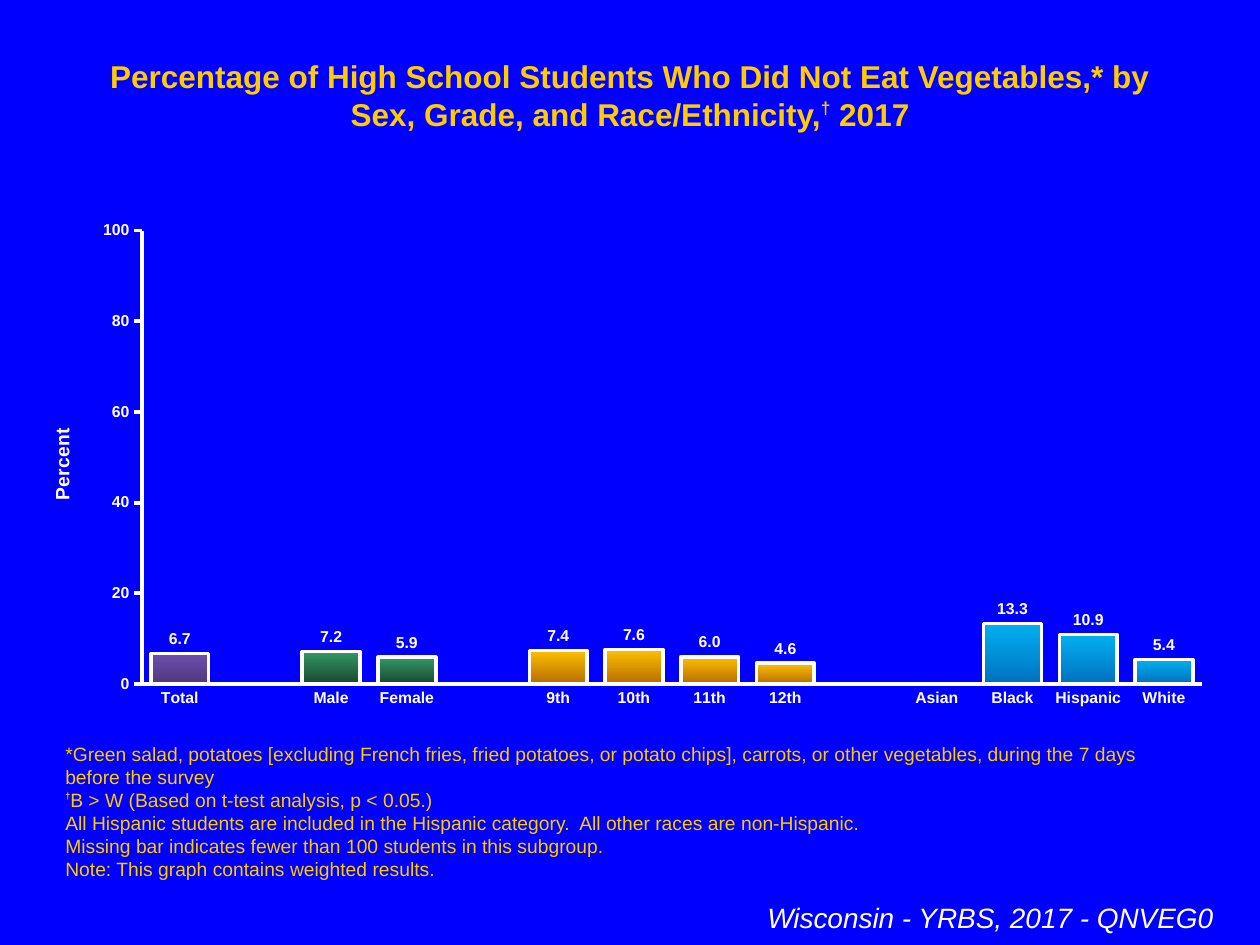
from lxml.etree import SubElement
from pptx import Presentation
from pptx.chart.data import CategoryChartData
from pptx.dml.color import RGBColor
from pptx.enum.chart import XL_CHART_TYPE, XL_LABEL_POSITION, XL_TICK_MARK
from pptx.enum.text import MSO_ANCHOR, MSO_AUTO_SIZE, PP_ALIGN
from pptx.oxml.ns import qn
from pptx.util import Inches, Pt


def style(font, size, color, bold=False, italic=False):
    font.name = "Arial"
    font.size = Pt(size)
    font.bold = bold
    font.italic = italic
    font.color.rgb = RGBColor.from_string(color)


def write(paragraph, pieces, size, color, align, bold=False, italic=False):
    paragraph.alignment = align
    style(paragraph.font, size, color, bold, italic)
    for text, raised_size, baseline in pieces:
        run = paragraph.add_run()
        run.text = text
        if baseline:
            style(run.font, raised_size, color, True)
            run._r.get_or_add_rPr().set("baseline", str(baseline * 1000))


GOLD, WHITE = "FFCC00", "FFFFFF"

prs = Presentation()
prs.slide_width, prs.slide_height = Inches(10), Inches(7.5)
slide = prs.slides.add_slide(prs.slide_layouts[5])
slide.background.fill.solid()
slide.background.fill.fore_color.rgb = RGBColor.from_string("0000FF")

heading = slide.shapes.title
heading.left, heading.top = Inches(0.5), Inches(0.4)
heading.width, heading.height = Inches(9), Inches(0.7)
heading.text_frame.word_wrap = True
heading.text_frame.auto_size = MSO_AUTO_SIZE.NONE
heading.text_frame.vertical_anchor = MSO_ANCHOR.TOP
write(heading.text_frame.paragraphs[0], [
    ("Percentage of High School Students Who Did Not Eat Vegetables,* by "
     "Sex, Grade, and Race/Ethnicity,", 18, 0),
    ("†", 17, 40),
    (" 2017", 18, 0),
], 18, GOLD, PP_ALIGN.CENTER, bold=True)

footnotes = [
    [("*Green salad, potatoes [excluding French fries, fried potatoes, or potato chips], "
      "carrots, or other vegetables, during the 7 days before the survey", 11, 0)],
    [("†", 9, 50), ("B > W (Based on t-test analysis, p < 0.05.)", 11, 0)],
    [("All Hispanic students are included in the Hispanic category.  "
      "All other races are non-Hispanic.", 11, 0)],
    [("Missing bar indicates fewer than 100 students in this subgroup.", 11, 0)],
    [("Note: This graph contains weighted results.", 11, 0)],
]
notes_frame = slide.shapes.add_textbox(
    Inches(0.42), Inches(5.84), Inches(9.17), Inches(1.2)).text_frame
notes_frame.word_wrap = True
notes_frame.vertical_anchor = MSO_ANCHOR.BOTTOM
for index, pieces in enumerate(footnotes):
    paragraph = notes_frame.add_paragraph() if index else notes_frame.paragraphs[0]
    write(paragraph, pieces, 11, GOLD, PP_ALIGN.LEFT)

survey_frame = slide.shapes.add_textbox(
    Inches(0.33), Inches(7.1), Inches(9.4), Inches(0.37)).text_frame
survey_frame.word_wrap = True
write(survey_frame.paragraphs[0], [("Wisconsin - YRBS, 2017 - QNVEG0", 16, 0)],
      16, WHITE, PP_ALIGN.RIGHT, italic=True)

groups = [
    ("6E4EAE", "4F387C", [("Total", 6.7)]),
    ("339966", "18472F", [("Male", 7.2), ("Female", 5.9)]),
    ("FFC000", "B66D00", [("9th", 7.4), ("10th", 7.6), ("11th", 6.0), ("12th", 4.6)]),
    ("00B0F0", "0070C0", [("Asian", None), ("Black", 13.3), ("Hispanic", 10.9), ("White", 5.4)]),
]
bars = []
for top_color, bottom_color, members in groups:
    if bars:
        bars.append(("", None, None))
    bars += [(name, value, (top_color, bottom_color)) for name, value in members]

data = CategoryChartData(number_format="0.0")
data.categories = [name for name, _, _ in bars]
data.add_series("Series 1", [value for _, value, _ in bars])
chart = slide.shapes.add_chart(
    XL_CHART_TYPE.COLUMN_CLUSTERED,
    Inches(0.17), Inches(1.67), Inches(9.56), Inches(4), data).chart
chart.has_legend = False
chart.has_title = False
style(chart.font, 18, WHITE)

plot = chart.plots[0]
plot.gap_width, plot.overlap = 31, 100
plot.vary_by_categories = False
plot.has_data_labels = True
labels = plot.data_labels
labels.show_value = True
labels.number_format, labels.number_format_is_linked = "#,##0.0", False
labels.position = XL_LABEL_POSITION.OUTSIDE_END
style(labels.font, 9, WHITE, bold=True)

series = plot.series[0]
series.format.fill.solid()
series.format.fill.fore_color.rgb = RGBColor.from_string("26CA59")
for index, (_, _, gradient) in enumerate(bars):
    if gradient:
        bar = series.points[index].format
        bar.fill.gradient()
        bar.fill.gradient_angle = 270
        for stop, position, color in zip(bar.fill.gradient_stops, (0, 1), gradient):
            stop.position = position
            stop.color.rgb = RGBColor.from_string(color)
        bar.line.color.rgb = RGBColor.from_string(WHITE)
        bar.line.width = Pt(2)

percent_axis = chart.value_axis
for axis, tick in ((chart.category_axis, XL_TICK_MARK.NONE),
                   (percent_axis, XL_TICK_MARK.OUTSIDE)):
    axis.has_major_gridlines = False
    axis.major_tick_mark, axis.minor_tick_mark = tick, XL_TICK_MARK.NONE
    axis.format.line.color.rgb = RGBColor.from_string(WHITE)
    axis.format.line.width = Pt(2.25)
    style(axis.tick_labels.font, 9, WHITE, bold=True)
percent_axis.minimum_scale, percent_axis.maximum_scale = 0, 100
percent_axis.major_unit = 20
percent_axis.tick_labels.number_format = "0"
percent_axis.tick_labels.number_format_is_linked = False
percent_title = percent_axis.axis_title.text_frame.paragraphs[0]
percent_title.add_run().text = "Percent"
style(percent_title.font, 11, WHITE, bold=True)

plot_area = chart._chartSpace.chart.plotArea
for automatic in plot_area.findall(qn("c:layout")):
    plot_area.remove(automatic)
layout = SubElement(plot_area, qn("c:layout"))
plot_area.insert(0, layout)
manual = SubElement(layout, qn("c:manualLayout"))
for tag, value in (("layoutTarget", "inner"), ("xMode", "edge"), ("yMode", "edge"),
                   ("x", 0.1), ("y", 0.04), ("w", 0.88), ("h", 0.9)):
    SubElement(manual, qn(f"c:{tag}")).set("val", str(value))

prs.save("out.pptx")
